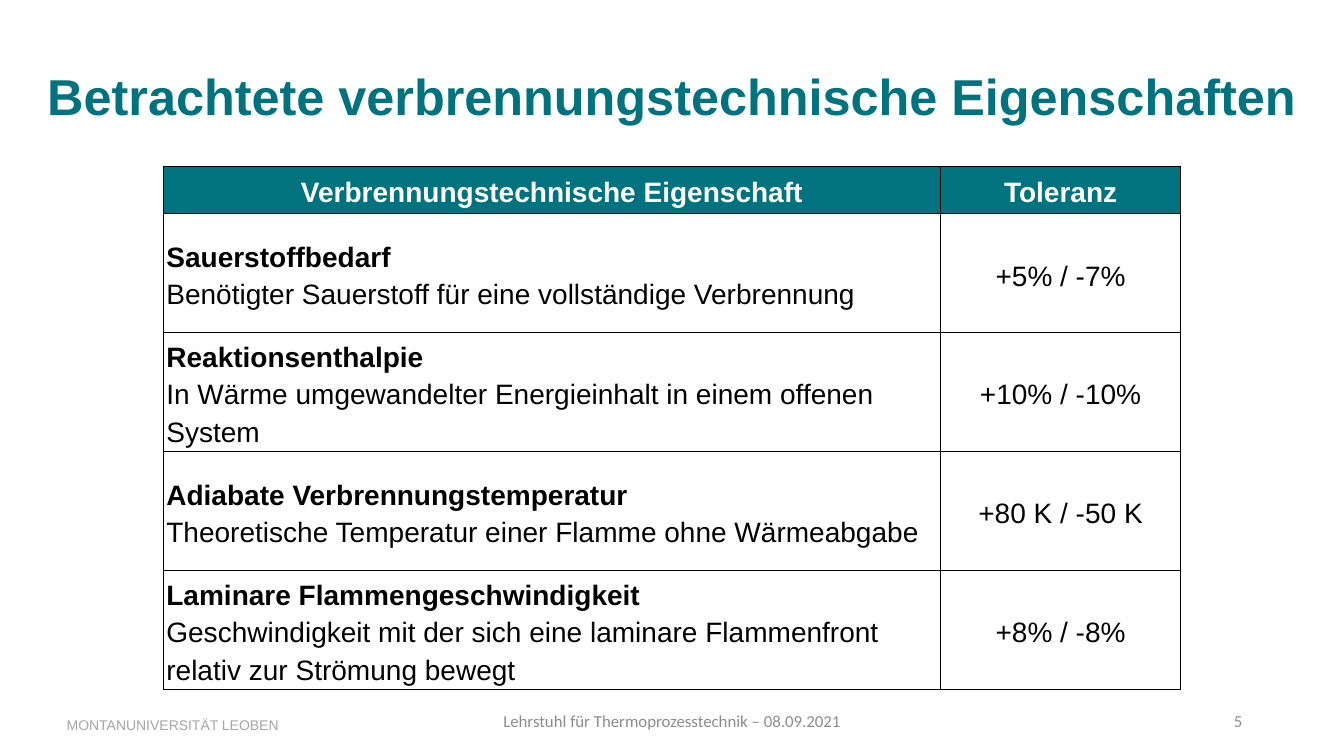
import pptx
import pptx.dml.color
import pptx.enum.text
import pptx.oxml
import pptx.oxml.ns
import pptx.util

RGB = pptx.dml.color.RGBColor
ALIGN = pptx.enum.text.PP_ALIGN
MIDDLE = pptx.enum.text.MSO_ANCHOR.MIDDLE
TOP = pptx.enum.text.MSO_ANCHOR.TOP

TEAL = RGB(0x00, 0x73, 0x7E)
BLACK = RGB(0x00, 0x00, 0x00)
WHITE = RGB(0xFF, 0xFF, 0xFF)
GREY = RGB(0x8C, 0x8C, 0x8C)
LIGHT_GREY = RGB(0xA6, 0xA6, 0xA6)

EMU_PER_PX = 9144  # 100 px to the inch

HEADER = ("Verbrennungstechnische Eigenschaft", "Toleranz")
PROPERTIES = [
    ("Sauerstoffbedarf",
     "Benötigter Sauerstoff für eine vollständige Verbrennung",
     "+5% / -7%"),
    ("Reaktionsenthalpie",
     "In Wärme umgewandelter Energieinhalt in einem offenen System",
     "+10% / -10%"),
    ("Adiabate Verbrennungstemperatur",
     "Theoretische Temperatur einer Flamme ohne Wärmeabgabe",
     "+80 K / -50 K"),
    ("Laminare Flammengeschwindigkeit",
     "Geschwindigkeit mit der sich eine laminare Flammenfront relativ zur Strömung bewegt",
     "+8% / -8%"),
]


def px(n):
    return pptx.util.Emu(n * EMU_PER_PX)


class SlideBuilder:
    def __init__(self, slide):
        self.s = slide

    def style_line(self, p, text, size, color, bold=False, font="Arial",
                   align=ALIGN.LEFT, spacing=1.0):
        for name, value in {"alignment": align, "line_spacing": spacing,
                            "space_before": pptx.util.Pt(0)}.items():
            setattr(p, name, value)
        r = p.add_run()
        r.text = text
        for name, value in {"name": font, "size": pptx.util.Pt(size),
                            "bold": bold}.items():
            setattr(r.font, name, value)
        r.font.color.rgb = color

    def title(self, box, text):
        sp = self.s.shapes.title
        sp.left, sp.top, sp.width, sp.height = map(px, box)
        tf = sp.text_frame
        tf.word_wrap = True
        tf.vertical_anchor = MIDDLE
        self.style_line(tf.paragraphs[0], text, 36, TEAL, bold=True,
                        align=ALIGN.CENTER, spacing=0.9)

    def text(self, box, text, size, color, anchor=MIDDLE, **style):
        tf = self.s.shapes.add_textbox(*map(px, box)).text_frame
        tf.word_wrap = True
        tf.vertical_anchor = anchor
        self.style_line(tf.paragraphs[0], text, size, color, **style)

    def table(self, left, top, widths, heights):
        table = self.s.shapes.add_table(
            len(heights), len(widths), px(left), px(top),
            px(sum(widths)), px(sum(heights))).table
        table.first_row = table.horz_banding = False
        for column, width in zip(table.columns, widths):
            column.width = px(width)
        for row, height in zip(table.rows, heights):
            row.height = px(height)
        return table

    def cell(self, cell, lines, color=BLACK, fill=None, align=ALIGN.LEFT):
        """Fill a cell with (text, bold) lines."""
        for name, value in {"margin_left": px(3), "margin_right": px(3),
                            "margin_top": 0, "margin_bottom": 0,
                            "vertical_anchor": MIDDLE}.items():
            setattr(cell, name, value)
        self.borders(cell)
        if fill is None:
            cell.fill.background()
        else:
            cell.fill.solid()
            cell.fill.fore_color.rgb = fill
        tf = cell.text_frame
        for i, (text, bold) in enumerate(lines):
            p = tf.add_paragraph() if i else tf.paragraphs[0]
            self.style_line(p, text, 20, color, bold=bold, align=align, spacing=1.2)

    def borders(self, cell):
        tcPr = cell._tc.get_or_add_tcPr()
        for side in "LRTB":
            tcPr.append(pptx.oxml.parse_xml(
                f'<a:ln{side} {pptx.oxml.ns.nsdecls("a")} w="{pptx.util.Pt(1)}">'
                f'<a:solidFill><a:srgbClr val="{BLACK}"/></a:solidFill>'
                f'</a:ln{side}>'))


def main():
    prs = pptx.Presentation()
    prs.slide_width, prs.slide_height = px(1333), px(750)
    b = SlideBuilder(prs.slides.add_slide(prs.slide_layouts[5]))

    # Title
    b.title((36, 40, 1261, 116), "Betrachtete verbrennungstechnische Eigenschaften")

    # Table of properties and tolerances
    table = b.table(162, 165, (771, 238), [47] + [118] * len(PROPERTIES))
    for col, heading in enumerate(HEADER):
        b.cell(table.cell(0, col), [(heading, True)], WHITE, TEAL, ALIGN.CENTER)
    for row, (name, meaning, tolerance) in enumerate(PROPERTIES, 1):
        b.cell(table.cell(row, 0), [(name, True), (meaning, False)])
        b.cell(table.cell(row, 1), [(tolerance, False)], align=ALIGN.CENTER)

    # Footer
    b.text((44, 706, 242, 27), "MONTANUNIVERSITÄT LEOBEN", 10, LIGHT_GREY,
           anchor=TOP, align=ALIGN.RIGHT)
    b.text((469, 695, 395, 40), "Lehrstuhl für Thermoprozesstechnik – 08.09.2021",
           12, GREY, font="Calibri", align=ALIGN.CENTER)
    b.text((942, 695, 300, 40), "5", 12, GREY, font="Calibri", align=ALIGN.RIGHT)

    prs.save("out.pptx")


if __name__ == "__main__":
    main()
